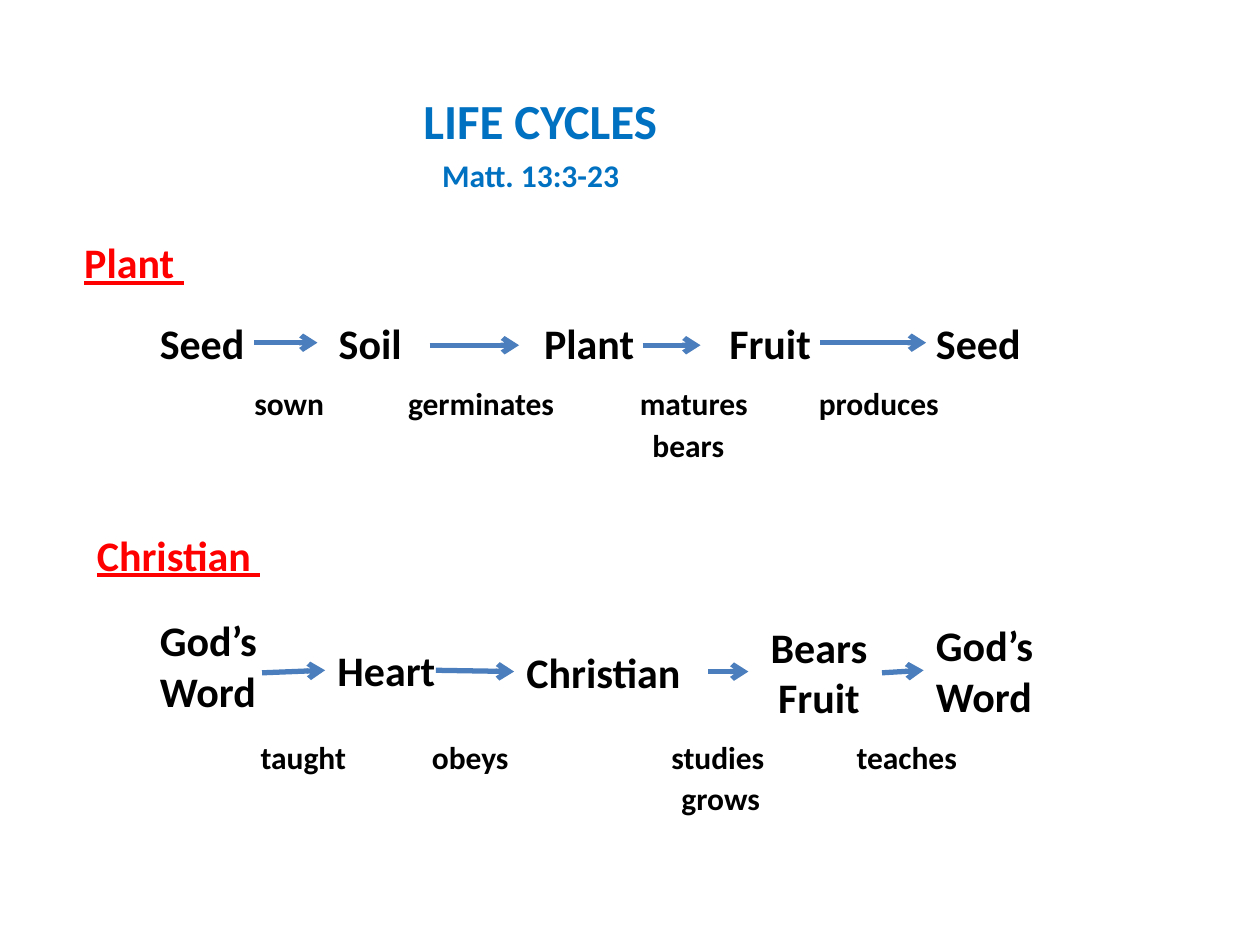
import pptx
import pptx.dml.color
import pptx.enum.shapes
import pptx.enum.text
import pptx.oxml.ns
import pptx.util
from lxml import etree

Inches = pptx.util.Inches
Align = pptx.enum.text.PP_ALIGN
BLUE = pptx.dml.color.RGBColor(0x00, 0x70, 0xC0)
RED = pptx.dml.color.RGBColor(0xFF, 0x00, 0x00)
BLACK = pptx.dml.color.RGBColor(0x00, 0x00, 0x00)
ARROW_BLUE = pptx.dml.color.RGBColor(0x4B, 0x7E, 0xBC)
INSET = 0.1

TITLE = ("LIFE CYCLES", (3.26, 0.67, 2.33, 0.57))
VERSE = ("Matt. 13:3-23", (3.41, 1.19, 2.15, 0.4))
HEADINGS = [
    ("Plant ", (0.57, 1.83, 1.75, 0.5)),
    ("Christian ", (0.67, 4.15, 1.58, 0.5)),
]
PLANT_STAGES = [("Seed", 1.27), ("Soil", 2.69), ("Plant", 4.32), ("Fruit", 5.79), ("Seed", 7.43)]
PLANT_ACTIONS = [("sown", 2.02), ("germinates", 3.24), ("matures", 5.08), ("produces", 6.5)]
CHRISTIAN_ACTIONS = [("taught", 2.07), ("obeys", 3.43), ("studies", 5.33), ("teaches", 6.8)]
WORD_ROWS = [
    (PLANT_STAGES, 2.47, 9.5, 24),
    (PLANT_ACTIONS, 3, 7.83, 18),
    (CHRISTIAN_ACTIONS, 5.81, 8.63, 18),
]
CHRISTIAN_STAGES = [
    ("God’s\nWord", (1.17, 4.83, 1.08, 0.91), Align.LEFT),
    ("Heart", (2.58, 5.07, 1.08, 0.5), Align.LEFT),
    ("Christian", (4.08, 5.08, 1.54, 0.5), Align.LEFT),
    ("Bears\nFruit", (6, 4.88, 1, 0.91), Align.CENTER),
    ("God’s\nWord", (7.33, 4.87, 1.42, 0.91), Align.LEFT),
]
SECOND_ACTIONS = [
    ("bears", (5.08, 3.33, 1.02, 0.4)),
    ("grows", (5.31, 6.13, 0.95, 0.4)),
]
ARROWS = [
    (2.02, 2.72, 2.52, 2.72),
    (3.41, 2.74, 4.12, 2.74),
    (5.1, 2.74, 5.56, 2.74),
    (6.51, 2.72, 7.35, 2.72),
    (2.08, 5.34, 2.58, 5.32),
    (3.46, 5.32, 4.08, 5.33),
    (5.62, 5.33, 5.94, 5.33),
    (7, 5.34, 7.33, 5.32),
]


def write(slide, text, place, size=24, color=BLACK, underline=None,
          align=Align.LEFT, stops=(), holder=None):
    left, top, width, height = map(Inches, place)
    if holder is None:
        holder = slide.shapes.add_textbox(left, top, width, height)
    holder.left, holder.top, holder.width, holder.height = left, top, width, height
    frame = holder.text_frame
    frame.word_wrap = True
    frame.auto_size = pptx.enum.text.MSO_AUTO_SIZE.NONE
    frame.vertical_anchor = pptx.enum.text.MSO_ANCHOR.TOP
    frame.text = text
    for paragraph in frame.paragraphs:
        paragraph.alignment = align
        font = paragraph.runs[0].font
        font.name, font.size, font.bold = "Calibri", pptx.util.Pt(size), True
        font.color.rgb = color
        font.underline = underline
        if stops:
            properties = paragraph._p.get_or_add_pPr()
            tabs = etree.SubElement(properties, pptx.oxml.ns.qn("a:tabLst"))
            for stop in stops:
                etree.SubElement(tabs, pptx.oxml.ns.qn("a:tab"),
                                 pos=str(Inches(stop)), algn="l")


def write_row(slide, words, top, right, size):
    start = words[0][1]
    left = start - INSET
    write(slide, "\t".join(word for word, _ in words),
          (left, top, right - left, size / 60 + 0.1), size=size,
          stops=[x - start for _, x in words[1:]])


def draw_arrow(slide, ends):
    arrow = slide.shapes.add_connector(
        pptx.enum.shapes.MSO_CONNECTOR.STRAIGHT, *map(Inches, ends))
    arrow.line.color.rgb = ARROW_BLUE
    arrow.line.width = pptx.util.Pt(3)
    etree.SubElement(arrow.line._get_or_add_ln(), pptx.oxml.ns.qn("a:tailEnd"), type="arrow")
    etree.SubElement(arrow._element.spPr, pptx.oxml.ns.qn("a:effectLst"))


def main():
    deck = pptx.Presentation()
    deck.slide_width, deck.slide_height = Inches(10), Inches(7.5)
    slide = deck.slides.add_slide(deck.slide_layouts[5])

    write(slide, *TITLE, size=28, color=BLUE, holder=slide.shapes.title)
    write(slide, *VERSE, size=18, color=BLUE)
    for heading, place in HEADINGS:
        write(slide, heading, place, color=RED, underline=True)
    for row in WORD_ROWS:
        write_row(slide, *row)
    for stage, place, align in CHRISTIAN_STAGES:
        write(slide, stage, place, align=align)
    for action, place in SECOND_ACTIONS:
        write(slide, action, place, size=18)
    for ends in ARROWS:
        draw_arrow(slide, ends)

    deck.save("out.pptx")


if __name__ == "__main__":
    main()
